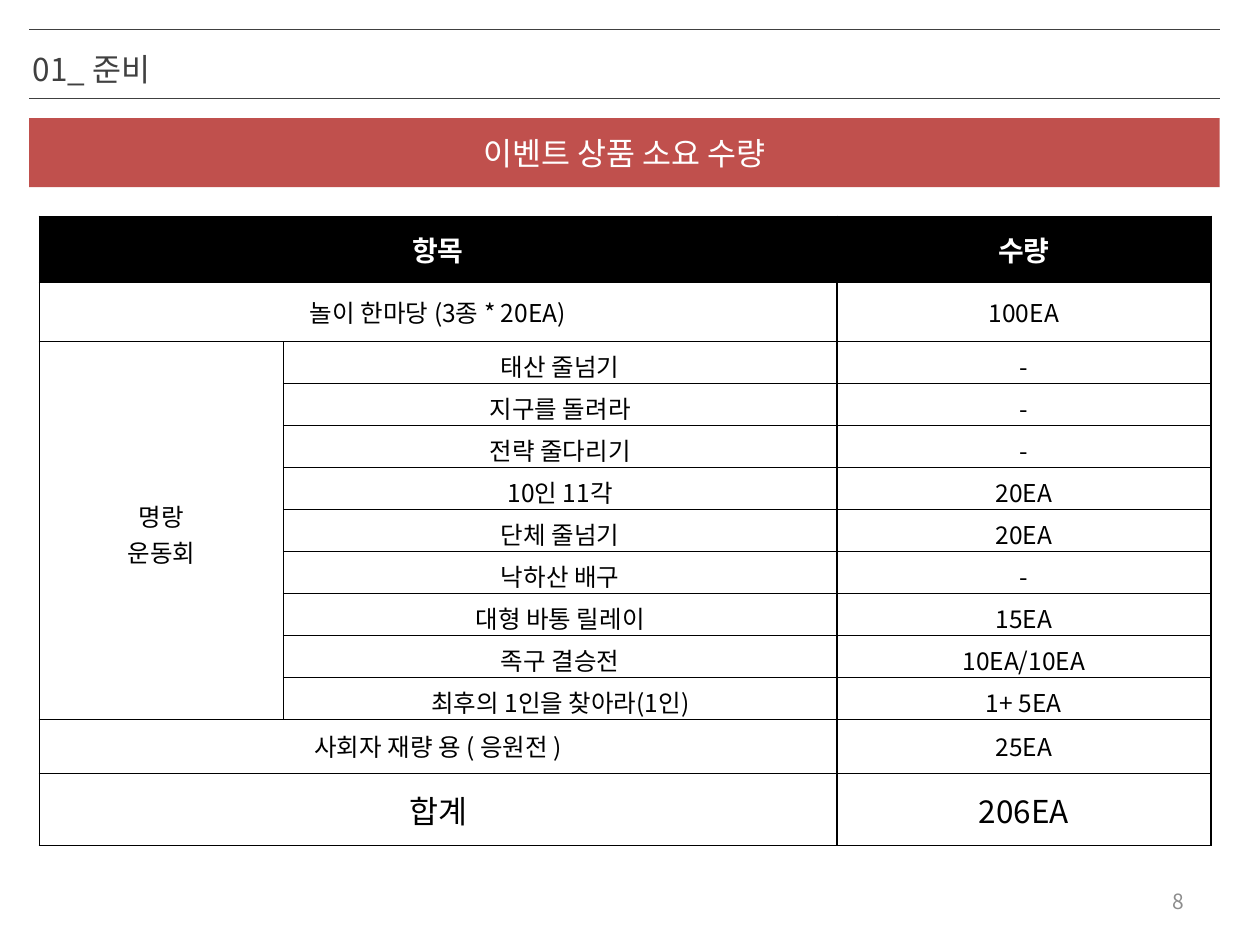
from dataclasses import dataclass

from lxml import etree
from pptx import Presentation
from pptx.dml.color import RGBColor
from pptx.enum import shapes, text
from pptx.oxml import ns
from pptx.util import Pt


@dataclass(frozen=True)
class Theme:
    font: str = "Noto Sans CJK KR"
    ink: str = "000000"
    paper: str = "FFFFFF"
    heading: str = "404040"
    banner: str = "C0504D"
    muted: str = "8C8C8C"
    large: int = 18
    header: int = 16
    body: int = 14
    small: int = 12


THEME = Theme()
LEFT, WIDTH = 16.6, 680.4
TABLE_LEFT, TABLE_TOP = 22.4, 123.6
COLUMN_WIDTHS = (139.7, 316.1, 213.8)
GAME_HEIGHT = 24

GAMES = [
    ("태산 줄넘기", "-"),
    ("지구를 돌려라", "-"),
    ("전략 줄다리기", "-"),
    ("10인 11각", "20EA"),
    ("단체 줄넘기", "20EA"),
    ("낙하산 배구", "-"),
    ("대형 바통 릴레이", "15EA"),
    ("족구 결승전", "10EA/10EA"),
    ("최후의 1인을 찾아라(1인)", "1+ 5EA"),
]


def color(value):
    return RGBColor.from_string(value)


def write(frame, words, size, ink, align, bold=False):
    """Fill a text frame and format each of its paragraphs."""
    frame.text = words
    for paragraph in frame.paragraphs:
        paragraph.alignment = align
        font = paragraph.font
        font.name, font.size, font.bold = THEME.font, Pt(size), bold
        font.color.rgb = color(ink)
        defaults = paragraph._p.pPr.find(ns.qn("a:defRPr"))
        etree.SubElement(defaults, ns.qn("a:ea"), typeface=THEME.font)


def add_rule(slide, y):
    rule = slide.shapes.add_connector(
        shapes.MSO_CONNECTOR.STRAIGHT, Pt(LEFT), Pt(y), Pt(LEFT + WIDTH), Pt(y))
    rule.line.color.rgb = color(THEME.heading)
    rule.line.width = Pt(0.25)
    etree.SubElement(rule._element.spPr, ns.qn("a:effectLst"))


def set_title(slide, words):
    title = slide.shapes.title
    title.left, title.top, title.width, title.height = Pt(11.5), Pt(28), Pt(516), Pt(26)
    frame = title.text_frame
    write(frame, words, THEME.large, THEME.heading, text.PP_ALIGN.LEFT)
    frame.paragraphs[0].line_spacing = 0.85
    frame.vertical_anchor = text.MSO_ANCHOR.TOP
    frame.auto_size = text.MSO_AUTO_SIZE.SHAPE_TO_FIT_TEXT


def add_banner(slide, words):
    banner = slide.shapes.add_shape(
        shapes.MSO_SHAPE.RECTANGLE, Pt(LEFT), Pt(67.5), Pt(WIDTH), Pt(39.5))
    banner.shadow.inherit = False
    banner.fill.solid()
    banner.fill.fore_color.rgb = color(THEME.banner)
    banner.line.fill.background()
    banner.text_frame.vertical_anchor = text.MSO_ANCHOR.MIDDLE
    write(banner.text_frame, words, THEME.large, THEME.paper, text.PP_ALIGN.CENTER)


def add_page_number(slide, number):
    frame = slide.shapes.add_textbox(Pt(516), Pt(500.4), Pt(168), Pt(28.8)).text_frame
    frame.word_wrap = True
    frame.vertical_anchor = text.MSO_ANCHOR.MIDDLE
    write(frame, number, THEME.small, THEME.muted, text.PP_ALIGN.RIGHT)


def set_borders(cell, column):
    """Inner vertical lines are slightly heavier than all others."""
    widths = {"L": 1 if column else 0.75,
              "R": 1 if column < len(COLUMN_WIDTHS) - 1 else 0.75,
              "T": 0.75, "B": 0.75}
    properties = cell._tc.get_or_add_tcPr()
    for side, width in widths.items():
        line = etree.SubElement(properties, ns.qn(f"a:ln{side}"), w=str(Pt(width)))
        fill = etree.SubElement(line, ns.qn("a:solidFill"))
        etree.SubElement(fill, ns.qn("a:srgbClr"), val=THEME.ink)


def add_prize_table(slide):
    # Each row: item group, item, quantity, height, text size
    rows = [("항목", "", "수량", 37.7, THEME.header),
            ("놀이 한마당 (3종 * 20EA)", "", "100EA", 34, THEME.body)]
    first_game = len(rows)
    rows += [("" if i else "명랑\n운동회", game, quantity, GAME_HEIGHT, THEME.body)
             for i, (game, quantity) in enumerate(GAMES)]
    last_game = len(rows) - 1
    rows += [("사회자 재량 용 ( 응원전 )", "", "25EA", 30.7, THEME.body),
             ("합계", "", "206EA", 41.5, THEME.large)]

    table = slide.shapes.add_table(
        len(rows), len(COLUMN_WIDTHS), Pt(TABLE_LEFT), Pt(TABLE_TOP),
        Pt(sum(COLUMN_WIDTHS)), Pt(sum(row[3] for row in rows))).table
    table.first_row = table.horz_banding = False
    for column, width in zip(table.columns, COLUMN_WIDTHS):
        column.width = Pt(width)

    for r, (*labels, height, size) in enumerate(rows):
        is_header, is_game = r == 0, first_game <= r <= last_game
        table.rows[r].height = Pt(height)
        for c, label in enumerate(labels):
            cell = table.cell(r, c)
            set_borders(cell, c)
            if is_header:
                cell.fill.solid()
                cell.fill.fore_color.rgb = color(THEME.ink)
            else:
                cell.fill.background()
            cell.vertical_anchor = text.MSO_ANCHOR.MIDDLE
            if is_game:
                cell.margin_bottom = 0
            write(cell.text_frame, label, size,
                  THEME.paper if is_header else THEME.ink,
                  text.PP_ALIGN.CENTER, bold=is_header)
        if not is_game:
            table.cell(r, 0).merge(table.cell(r, 1))
    table.cell(first_game, 0).merge(table.cell(last_game, 0))


def main():
    deck = Presentation()
    deck.slide_width, deck.slide_height = Pt(720), Pt(540)
    slide = deck.slides.add_slide(deck.slide_layouts[5])

    # Heading between two rules
    add_rule(slide, 16.6)
    set_title(slide, "01_ 준비")
    add_rule(slide, 56.2)

    # Prize quantities
    add_banner(slide, "이벤트 상품 소요 수량")
    add_prize_table(slide)

    # Footer
    add_page_number(slide, "8")
    deck.save("out.pptx")


if __name__ == "__main__":
    main()
